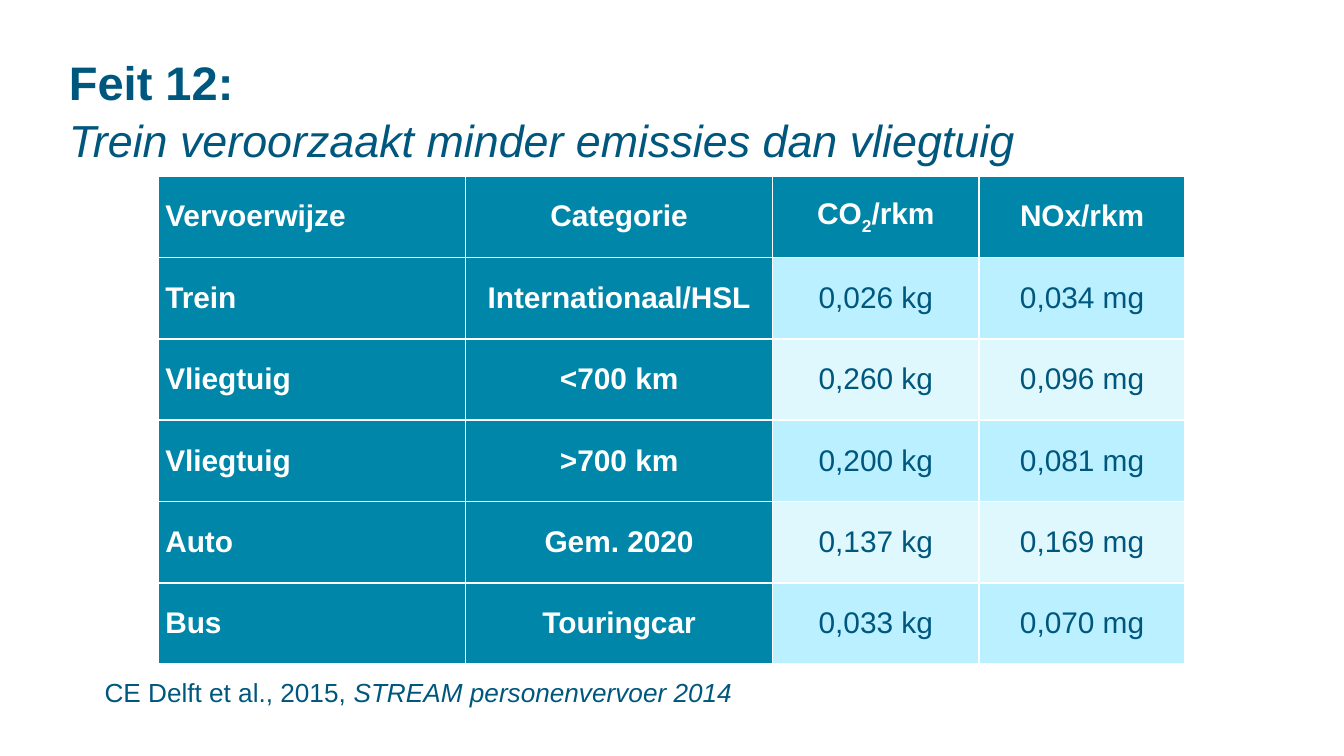
from dataclasses import dataclass

from lxml import etree
from pptx import Presentation
from pptx import util as u
from pptx.dml import color
from pptx.enum import text
from pptx.oxml import ns

WHITE, NAVY, TEAL = "FFFFFF", "00577E", "0086A8"
BANDS = ["BAF0FF", "DFF8FE"]
HEADINGS = [
    [("Vervoerwijze", 0)],
    [("Categorie", 0)],
    [("CO", 0), ("2", -25), ("/rkm", 0)],
    [("NOx/rkm", 0)],
]
EMISSIONS = [
    ("Trein", "Internationaal/HSL", "0,026 kg", "0,034 mg"),
    ("Vliegtuig", "<700 km", "0,260 kg", "0,096 mg"),
    ("Vliegtuig", ">700 km", "0,200 kg", "0,081 mg"),
    ("Auto", "Gem. 2020", "0,137 kg", "0,169 mg"),
    ("Bus", "Touringcar", "0,033 kg", "0,070 mg"),
]


def rgb(value):
    return color.RGBColor.from_string(value)


@dataclass
class FactSlide:
    """Draws styled elements on one slide, with lengths in percent of its size."""

    deck: object
    slide: object
    font: str = "Arial"

    def area(self, left, top, width, height):
        wide, high = self.deck.slide_width, self.deck.slide_height
        return [round(share * side / 100) for share, side in
                zip((left, top, width, height), (wide, high, wide, high))]

    def run(self, paragraph, wording, size, ink=NAVY, bold=False, italic=False, baseline=0):
        piece = paragraph.add_run()
        piece.text = wording
        piece.font.name, piece.font.size = self.font, u.Pt(size)
        piece.font.bold, piece.font.italic = bold, italic
        piece.font.color.rgb = rgb(ink)
        if baseline:
            piece._r.get_or_add_rPr().set("baseline", str(baseline * 1000))

    def line(self, area, runs, size, spacing=None, anchor=text.MSO_ANCHOR.MIDDLE):
        frame = self.slide.shapes.add_textbox(*self.area(*area)).text_frame
        frame.word_wrap = True
        frame.vertical_anchor = anchor
        frame.margin_left = frame.margin_right = frame.margin_top = frame.margin_bottom = 0
        paragraph = frame.paragraphs[0]
        if spacing:
            paragraph.line_spacing = u.Pt(spacing)
        for wording, look in runs:
            self.run(paragraph, wording, size, **look)

    def borders(self, cell):
        properties = cell._tc.get_or_add_tcPr()
        for place, side in enumerate("LRTB"):
            edge = etree.Element(ns.qn(f"a:ln{side}"), w=str(u.Pt(1)))
            fill = etree.SubElement(edge, ns.qn("a:solidFill"))
            etree.SubElement(fill, ns.qn("a:srgbClr"), val=WHITE)
            properties.insert(place, edge)

    def cell(self, cell, runs, fill, ink, bold, align):
        cell.fill.solid()
        cell.fill.fore_color.rgb = rgb(fill)
        cell.vertical_anchor = text.MSO_ANCHOR.MIDDLE
        cell.margin_left = cell.margin_right = u.Inches(0.05)
        cell.margin_top = cell.margin_bottom = u.Inches(0.04)
        paragraph = cell.text_frame.paragraphs[0]
        paragraph.alignment = align
        for wording, baseline in runs:
            self.run(paragraph, wording, 16, ink, bold, baseline=baseline)
        self.borders(cell)

    def table(self, area, shares, headings, records):
        rows = [headings] + [[[(value, 0)] for value in record] for record in records]
        box = self.area(*area)
        grid = self.slide.shapes.add_table(len(rows), len(shares), *box).table
        for column, share in zip(grid.columns, shares):
            column.width = round(box[2] * share / sum(shares))
        for r, row in enumerate(rows):
            for c, runs in enumerate(row):
                label = r == 0 or c < 2
                fill, ink = (TEAL, WHITE) if label else (BANDS[(r - 1) % 2], NAVY)
                align = text.PP_ALIGN.CENTER if c else text.PP_ALIGN.LEFT
                self.cell(grid.cell(r, c), runs, fill, ink, label, align)


def main():
    deck = Presentation()
    deck.slide_width = u.Inches(10)
    deck.slide_height = deck.slide_width * 9 // 16
    fact = FactSlide(deck, deck.slides.add_slide(deck.slide_layouts[6]))
    fact.line((5.13, 6.76, 89.4, 8), [("Feit 12:", {"bold": True})], 25.2)
    fact.line((5.13, 15.85, 89.4, 6.2),
              [("Trein veroorzaakt minder emissies dan vliegtuig", {"italic": True})],
              24, spacing=24.8, anchor=text.MSO_ANCHOR.TOP)
    fact.table((11.8, 23.28, 76.4, 64.6), (22.85, 22.85, 15.35, 15.35), HEADINGS, EMISSIONS)
    fact.line((7.78, 88.9, 86, 5.4),
              [("CE Delft et al., 2015, ", {}),
               ("STREAM personenvervoer 2014", {"italic": True})], 14)
    deck.save("out.pptx")


if __name__ == "__main__":
    main()
